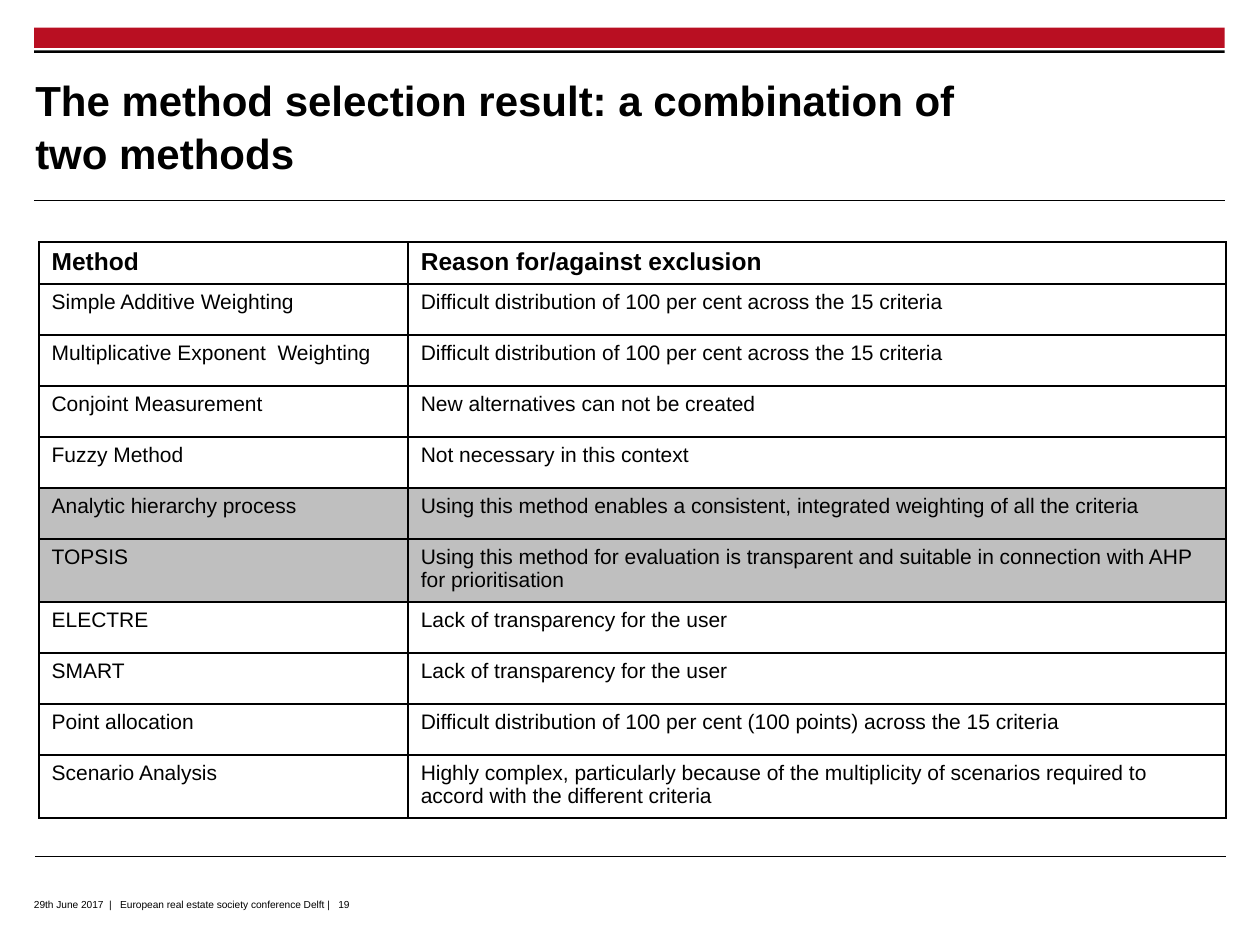
from dataclasses import dataclass

from lxml.etree import SubElement
from pptx import Presentation
from pptx.dml.color import RGBColor
from pptx.enum.shapes import MSO_CONNECTOR, MSO_SHAPE
from pptx.enum.text import MSO_ANCHOR, MSO_AUTO_SIZE, PP_ALIGN
from pptx.oxml.ns import qn
from pptx.slide import Slide
from pptx.table import _Cell
from pptx.util import Inches, Pt


@dataclass(frozen=True)
class Theme:
    face: str = "Arial"
    ink: str = "000000"
    red: str = "B90F22"
    gray: str = "BFBFBF"
    white: str = "FFFFFF"
    title: int = 24
    head: int = 14
    body: int = 12
    foot: int = 10
    rule: float = 0.6
    edge: int = 1


@dataclass(frozen=True)
class Bar:
    top: float
    height: float
    color: str


@dataclass(frozen=True)
class Rule:
    left: float
    top: float


@dataclass(frozen=True)
class Method:
    name: str
    reason: str
    chosen: bool = False


THEME = Theme()
LEFT, WIDTH = 0.27, 9.45
BARS = [Bar(0.22, 0.16, THEME.red), Bar(0.4, 0.02, THEME.ink)]
RULES = [Rule(LEFT, 1.59), Rule(0.28, 6.8)]
COLS = [2.93, 6.49]
HEAD, ROW = 0.24, 0.405
SPLIT = "Difficult distribution of 100 per cent across the 15 criteria"
OPAQUE = "Lack of transparency for the user"
METHODS = [
    Method("Simple Additive Weighting", SPLIT),
    Method("Multiplicative Exponent  Weighting", SPLIT),
    Method("Conjoint Measurement", "New alternatives can not be created"),
    Method("Fuzzy Method", "Not necessary in this context"),
    Method("Analytic hierarchy process",
           "Using this method enables a consistent, integrated weighting "
           "of all the criteria", True),
    Method("TOPSIS",
           "Using this method for evaluation is transparent and suitable "
           "in connection with AHP for prioritisation", True),
    Method("ELECTRE", OPAQUE),
    Method("SMART", OPAQUE),
    Method("Point allocation",
           "Difficult distribution of 100 per cent (100 points) "
           "across the 15 criteria"),
    Method("Scenario Analysis",
           "Highly complex, particularly because of the multiplicity of "
           "scenarios required to accord with the different criteria"),
]


def write(frame, text: str, size: int, bold: bool = False) -> None:
    frame.text = text
    frame.word_wrap = True
    para = frame.paragraphs[0]
    para.alignment = PP_ALIGN.LEFT
    font = para.font
    font.name, font.size, font.bold = THEME.face, Pt(size), bold
    font.color.rgb = RGBColor.from_string(THEME.ink)


def trim(frame) -> None:
    frame.margin_left = frame.margin_right = 0
    frame.margin_top = frame.margin_bottom = 0


def add_bar(slide: Slide, bar: Bar) -> None:
    shape = slide.shapes.add_shape(
        MSO_SHAPE.RECTANGLE, Inches(LEFT), Inches(bar.top),
        Inches(WIDTH), Inches(bar.height))
    shape.shadow.inherit = False
    shape.fill.solid()
    shape.fill.fore_color.rgb = RGBColor.from_string(bar.color)
    shape.line.fill.background()


def add_rule(slide: Slide, rule: Rule) -> None:
    line = slide.shapes.add_connector(
        MSO_CONNECTOR.STRAIGHT, Inches(rule.left), Inches(rule.top),
        Inches(rule.left + WIDTH), Inches(rule.top))
    line.line.width = Pt(THEME.rule)
    line.line.color.rgb = RGBColor.from_string(THEME.ink)
    SubElement(line._element.spPr, qn("a:effectLst"))


def add_title(slide: Slide, text: str) -> None:
    title = slide.shapes.title
    title.left, title.top = Inches(0.28), Inches(0.53)
    title.width, title.height = Inches(7.52), Inches(0.92)
    frame = title.text_frame
    write(frame, text, THEME.title, True)
    trim(frame)
    frame.auto_size = MSO_AUTO_SIZE.NONE
    frame.vertical_anchor = MSO_ANCHOR.MIDDLE
    frame.paragraphs[0].line_spacing = 1.06


def add_foot(slide: Slide, text: str) -> None:
    box = slide.shapes.add_textbox(
        Inches(LEFT), Inches(7.04), Inches(9.33), Inches(0.25))
    frame = box.text_frame
    write(frame, text, THEME.foot)
    trim(frame)
    run = frame.paragraphs[0].runs[0]
    run.font.size = Pt(THEME.foot)
    run._r.get_or_add_rPr().set("baseline", "-25000")


def add_edges(cell: _Cell) -> None:
    props = cell._tc.get_or_add_tcPr()
    for place, side in enumerate(("a:lnL", "a:lnR", "a:lnT", "a:lnB")):
        edge = SubElement(props, qn(side), w=str(Pt(THEME.edge)))
        fill = SubElement(edge, qn("a:solidFill"))
        SubElement(fill, qn("a:srgbClr"), val=THEME.ink)
        props.insert(place, edge)


def set_cell(cell: _Cell, text: str, size: int, bold: bool, fill: str) -> None:
    write(cell.text_frame, text, size, bold)
    cell.fill.solid()
    cell.fill.fore_color.rgb = RGBColor.from_string(fill)
    add_edges(cell)


def add_grid(slide: Slide, methods: list[Method]) -> None:
    rows = [Method("Method", "Reason for/against exclusion"), *methods]
    table = slide.shapes.add_table(
        len(rows), len(COLS), Inches(0.31), Inches(1.92),
        Inches(sum(COLS)), Inches(HEAD + ROW * len(methods))).table
    table.first_row = table.horz_banding = False
    for col, width in zip(table.columns, COLS):
        col.width = Inches(width)
    for index, item in enumerate(rows):
        head = index == 0
        table.rows[index].height = Inches(HEAD if head else ROW)
        size = THEME.head if head else THEME.body
        fill = THEME.gray if item.chosen else THEME.white
        for col, text in enumerate((item.name, item.reason)):
            set_cell(table.cell(index, col), text, size, head, fill)


def main() -> None:
    deck = Presentation()
    deck.slide_width, deck.slide_height = Inches(10), Inches(7.5)
    slide = deck.slides.add_slide(deck.slide_layouts[5])
    for bar in BARS:
        add_bar(slide, bar)
    for rule in RULES:
        add_rule(slide, rule)
    add_foot(slide, "29th June 2017  |   European real estate society "
                    "conference Delft |   19")
    add_title(slide, "The method selection result: a combination of two methods")
    add_grid(slide, METHODS)
    deck.save("out.pptx")


if __name__ == "__main__":
    main()
